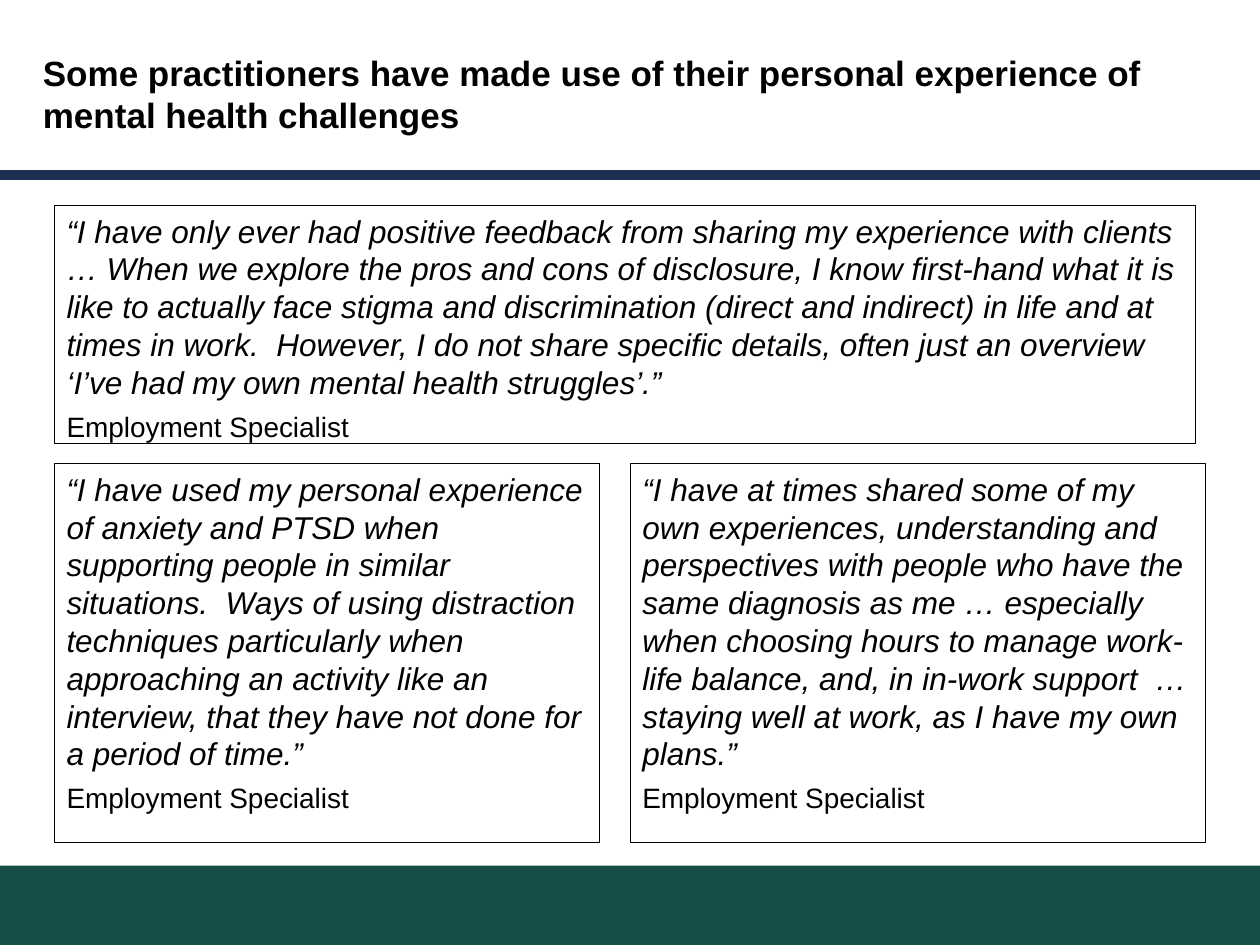
from dataclasses import dataclass

from lxml.etree import SubElement
from pptx import Presentation
from pptx.dml.color import RGBColor
from pptx.enum.shapes import MSO_CONNECTOR, MSO_SHAPE
from pptx.enum.text import MSO_ANCHOR, PP_ALIGN
from pptx.oxml.ns import qn
from pptx.util import Inches, Pt


@dataclass(frozen=True)
class Theme:
    font: str = "Arial"
    ink: str = "000000"
    paper: str = "FFFFFF"
    navy: str = "1D3054"
    green: str = "164F48"
    title: int = 20
    quote: int = 18
    source: int = 16
    leading: float = 1.2


THEME = Theme()
TITLE = ("Some practitioners have made use of their personal experience "
         "of mental health challenges")
SOURCE = "Employment Specialist"

# Each quote: left, top, width, height, wording
QUOTES = [
    (0.43, 1.63, 9.06, 1.89,
     "“I have only ever had positive feedback from sharing my experience with "
     "clients … When we explore the pros and cons of disclosure, I know "
     "first-hand what it is like to actually face stigma and discrimination "
     "(direct and indirect) in life and at times in work.  However, I do not "
     "share specific details, often just an overview ‘I’ve had my own mental "
     "health struggles’.”"),
    (0.43, 3.68, 4.33, 3.01,
     "“I have used my personal experience of anxiety and PTSD when supporting "
     "people in similar situations.  Ways of using distraction techniques "
     "particularly when approaching an activity like an interview, that they "
     "have not done for a period of time.”"),
    (5, 3.68, 4.57, 3.01,
     "“I have at times shared some of my own experiences, understanding and "
     "perspectives with people who have the same diagnosis as me … especially "
     "when choosing hours to manage work-life balance, and, in in-work "
     "support  … staying well at work, as I have my own plans.”"),
]


def write(p, text, size, bold=False, italic=False, after=0):
    p.alignment = PP_ALIGN.LEFT
    p.line_spacing = Pt(size * THEME.leading)
    p.space_before = Pt(0)
    p.space_after = Pt(after)
    r = p.add_run()
    r.text = text
    r.font.name = THEME.font
    r.font.size = Pt(size)
    r.font.bold = bold
    r.font.italic = italic
    r.font.color.rgb = RGBColor.from_string(THEME.ink)


def set_frame(tf):
    tf.word_wrap = True
    tf.vertical_anchor = MSO_ANCHOR.TOP
    tf.margin_left = tf.margin_right = Inches(0.1)
    tf.margin_top = tf.margin_bottom = Inches(0.05)


def add_rect(s, x, y, w, h, fill, line=None):
    sp = s.shapes.add_shape(MSO_SHAPE.RECTANGLE, Inches(x), Inches(y),
                            Inches(w), Inches(h))
    sp.shadow.inherit = False
    sp.fill.solid()
    sp.fill.fore_color.rgb = RGBColor.from_string(fill)
    if line:
        sp.line.color.rgb = RGBColor.from_string(line)
        sp.line.width = Pt(0.5)
    else:
        sp.line.fill.background()
    return sp


def add_rule(s, y):
    rule = s.shapes.add_connector(MSO_CONNECTOR.STRAIGHT, Inches(0), Inches(y),
                                  Inches(10), Inches(y))
    rule.line.color.rgb = RGBColor.from_string(THEME.navy)
    rule.line.width = Pt(6)
    SubElement(rule._element.spPr, qn("a:effectLst"))


def add_title(s, text):
    sp = s.shapes.title
    sp.left, sp.top = Inches(0.24), Inches(0.36)
    sp.width, sp.height = Inches(9.63), Inches(0.77)
    set_frame(sp.text_frame)
    write(sp.text_frame.paragraphs[0], text, THEME.title, bold=True)


def add_quote(s, x, y, w, h, text):
    tf = add_rect(s, x, y, w, h, THEME.paper, THEME.ink).text_frame
    set_frame(tf)
    write(tf.paragraphs[0], text, THEME.quote, italic=True, after=5)
    write(tf.add_paragraph(), SOURCE, THEME.source)


def main():
    prs = Presentation()
    prs.slide_width, prs.slide_height = Inches(10), Inches(7.5)
    s = prs.slides.add_slide(prs.slide_layouts[5])

    # Footer band and heading
    add_rect(s, 0, 6.87, 10, 0.63, THEME.green)
    add_rule(s, 1.39)
    add_title(s, TITLE)

    # Quotes
    for quote in QUOTES:
        add_quote(s, *quote)

    prs.save("out.pptx")


if __name__ == "__main__":
    main()
